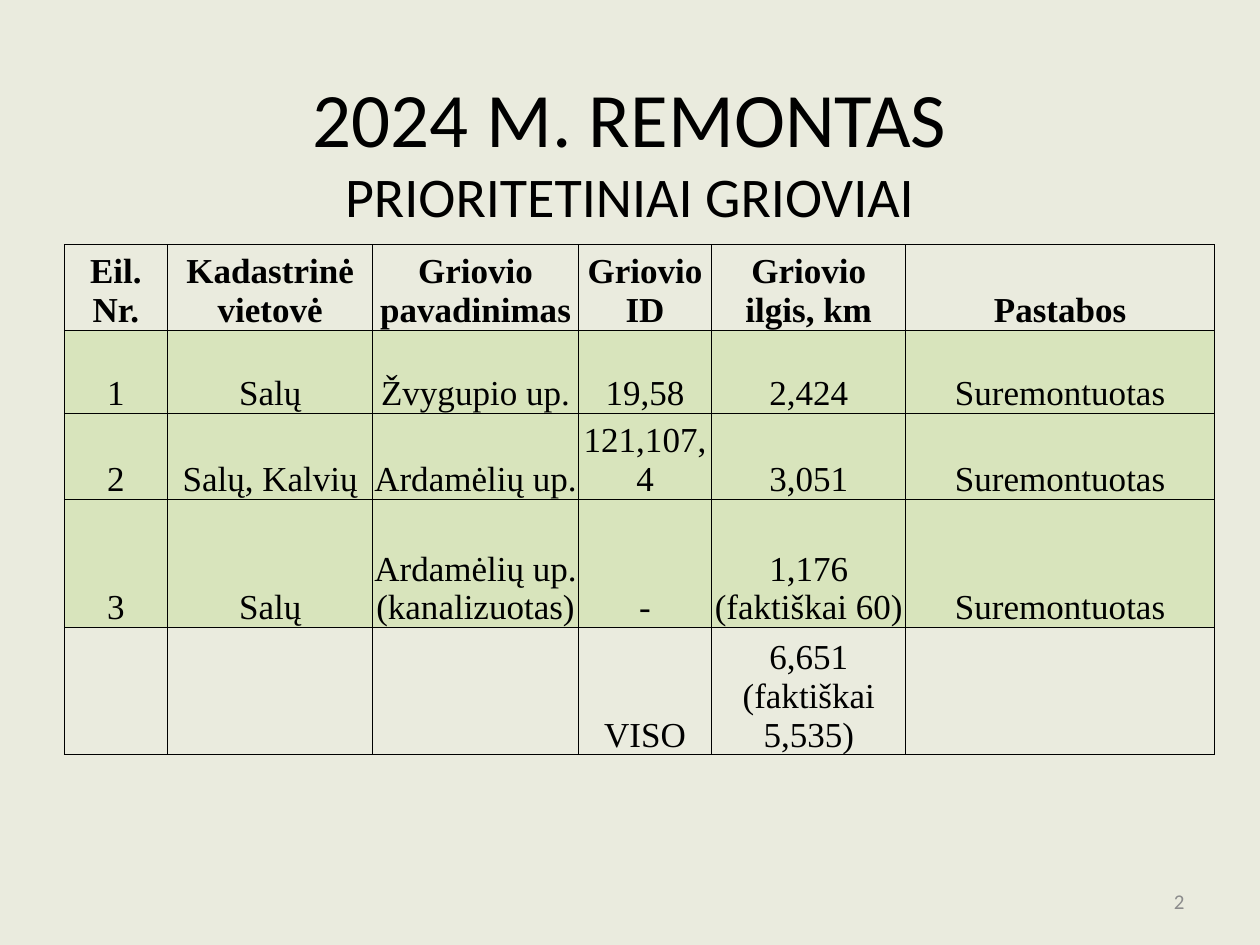
"""Build the slide listing the priority ditches repaired in 2024."""
from lxml.etree import SubElement
from pptx import Presentation
from pptx.dml.color import RGBColor
from pptx.enum.text import MSO_ANCHOR, PP_ALIGN
from pptx.oxml.ns import qn
from pptx.util import Inches, Pt

BACKGROUND = RGBColor(0xEA, 0xEB, 0xDE)
REPAIRED = RGBColor(0xD8, 0xE4, 0xBC)
BLACK = RGBColor(0, 0, 0)
GRAY = RGBColor(0x8C, 0x8C, 0x8C)

TEXTS = [
    ("2024 M. REMONTAS", (0.5, 0.3, 9, 1.25), 44, BLACK, PP_ALIGN.CENTER, MSO_ANCHOR.MIDDLE),
    ("PRIORITETINIAI GRIOVIAI", (0.5, 1.23, 9, 5.47), 32, BLACK, PP_ALIGN.CENTER, MSO_ANCHOR.TOP),
    ("2", (7.17, 6.95, 2.33, 0.4), 12, GRAY, PP_ALIGN.RIGHT, MSO_ANCHOR.MIDDLE),
]
ROWS = [
    ("Eil. Nr.", "Kadastrinė vietovė", "Griovio pavadinimas", "Griovio ID", "Griovio ilgis, km", "Pastabos"),
    ("1", "Salų", "Žvygupio up.", "19,58", "2,424", "Suremontuotas"),
    ("2", "Salų, Kalvių", "Ardamėlių up.", "121,107,4", "3,051", "Suremontuotas"),
    ("3", "Salų", "Ardamėlių up.(kanalizuotas)", "-", "1,176 (faktiškai 60)", "Suremontuotas"),
    ("", "", "", "VISO", "6,651 (faktiškai 5,535)", ""),
]
COLUMN_WIDTHS = [0.82, 1.63, 1.63, 1.06, 1.54, 2.45]
ROW_HEIGHTS = [0.68, 0.66, 0.68, 1.02, 0.66]


def style_paragraph(paragraph, font_name, size, color, alignment, bold=False):
    paragraph.alignment = alignment
    font = paragraph.font
    font.name, font.size, font.bold = font_name, Pt(size), bold
    font.color.rgb = color


def add_text(slide, text, box, size, color, alignment, anchor):
    frame = slide.shapes.add_textbox(*map(Inches, box)).text_frame
    frame.word_wrap = True
    frame.vertical_anchor = anchor
    frame.text = text
    style_paragraph(frame.paragraphs[0], "Calibri", size, color, alignment)


def add_borders(cell):
    properties = cell._tc.get_or_add_tcPr()
    for index, side in enumerate(("a:lnL", "a:lnR", "a:lnT", "a:lnB")):
        line = SubElement(properties, qn(side), w=str(Pt(0.5)))
        fill = SubElement(line, qn("a:solidFill"))
        SubElement(fill, qn("a:srgbClr"), val=str(BLACK))
        properties.insert(index, line)


def fill_cell(cell, text, header, repaired):
    cell.text = text
    cell.vertical_anchor = MSO_ANCHOR.BOTTOM
    cell.margin_left = cell.margin_right = cell.margin_top = Inches(0.01)
    cell.margin_bottom = 0
    style_paragraph(cell.text_frame.paragraphs[0], "Times New Roman", 20, BLACK, PP_ALIGN.CENTER, header)
    if repaired:
        cell.fill.solid()
        cell.fill.fore_color.rgb = REPAIRED
    else:
        cell.fill.background()
    add_borders(cell)


def add_ditch_table(slide):
    size = Inches(sum(COLUMN_WIDTHS)), Inches(sum(ROW_HEIGHTS))
    table = slide.shapes.add_table(
        len(ROWS), len(COLUMN_WIDTHS), Inches(0.51), Inches(1.94), *size
    ).table
    table.first_row = table.horz_banding = False
    for column, width in zip(table.columns, COLUMN_WIDTHS):
        column.width = Inches(width)
    for index, (row, height, texts) in enumerate(zip(table.rows, ROW_HEIGHTS, ROWS)):
        row.height = Inches(height)
        for cell, text in zip(row.cells, texts):
            fill_cell(cell, text, index == 0, texts[-1] == "Suremontuotas")


def main():
    presentation = Presentation()
    presentation.slide_width, presentation.slide_height = Inches(10), Inches(7.5)
    slide = presentation.slides.add_slide(presentation.slide_layouts[6])
    slide.background.fill.solid()
    slide.background.fill.fore_color.rgb = BACKGROUND
    *headings, page_number = TEXTS
    for heading in headings:
        add_text(slide, *heading)
    add_ditch_table(slide)
    add_text(slide, *page_number)
    presentation.save("out.pptx")


if __name__ == "__main__":
    main()
